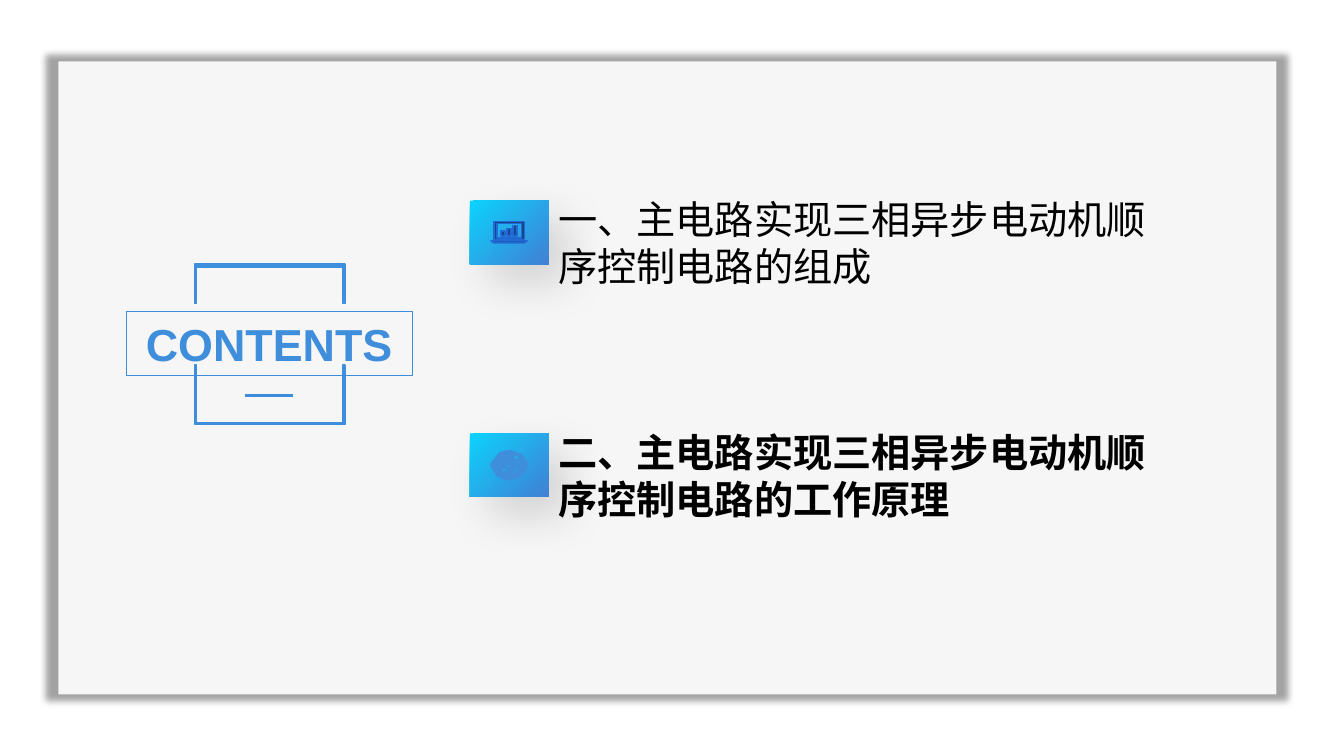
import pptx
import pptx.dml.color
import pptx.enum.dml
import pptx.enum.shapes
import pptx.enum.text
import pptx.oxml
import pptx.oxml.ns
import pptx.util

Inches = pptx.util.Inches
Pt = pptx.util.Pt
RGBColor = pptx.dml.color.RGBColor
RECTANGLE = pptx.enum.shapes.MSO_SHAPE.RECTANGLE

WHITE = RGBColor(0xFF, 0xFF, 0xFF)
BLACK = RGBColor(0, 0, 0)
BLUE = RGBColor(0x3F, 0x8E, 0xDB)
TILE_CYAN = RGBColor(0x00, 0xD1, 0xFE)
TILE_BLUE = RGBColor(0x39, 0x7C, 0xD5)
LAPTOP_FILL = RGBColor(0x16, 0x46, 0x8D)
LAPTOP_LINE = RGBColor(0x21, 0x69, 0xD3)
CHINESE_FONT = "Noto Sans CJK SC"


def rectangle_outline(left, top, right, bottom):
    return [(left, top), (right, top), (right, bottom), (left, bottom)]


# Outlines are in hundredths of an inch from the top left of their figure.
LAPTOP = [
    [(1, 19), (35, 19), (36, 19), (33, 21), (3, 21), (0, 19)],
    rectangle_outline(3, 0, 33, 18),
    rectangle_outline(6, 2, 30, 16),
    *(rectangle_outline(left, top, left + 4, 14)
      for left, top in ((10, 9), (16, 7), (22, 4))),
]
BALL = [
    [(22, 23), (23, 24), (26, 27), (18, 29), (13, 28)],
    [(21, 20), (22, 20), (22, 21)],
    [(16, 20), (19, 20), (21, 22), (11, 28), (9, 26), (12, 21)],
    [(35, 19), (27, 27), (23, 22), (24, 21), (25, 21), (27, 19)],
    [(1, 17), (10, 19), (11, 20), (7, 26)],
    [(16, 17), (18, 19), (16, 19), (15, 17)],
    [(30, 14), (34, 18), (27, 18)],
    [(31, 13), (36, 14), (35, 17)],
    [(12, 12), (14, 15), (15, 15), (14, 17), (10, 18), (0, 16), (0, 13)],
    [(20, 12), (29, 13), (26, 17), (22, 19), (20, 19), (17, 16)],
    [(18, 12), (18, 13), (16, 14), (15, 14), (14, 12)],
    [(24, 9), (26, 9), (27, 10), (28, 11), (21, 11)],
    [(34, 9), (36, 13), (31, 12)],
    [(31, 5), (33, 7), (30, 12), (28, 10), (27, 9), (28, 7), (28, 6)],
    [(8, 3), (12, 11), (1, 12)],
    [(22, 1), (30, 4), (27, 5), (24, 5)],
    [(18, 0), (20, 0), (23, 5), (22, 7), (23, 8), (19, 11), (13, 11), (9, 2)],
]
BRACKETS = [
    [(0, 100), (2, 100), (2, 157), (147, 157),
     (147, 100), (149, 100), (149, 159), (0, 159)],
    [(0, 0), (149, 0), (149, 39), (147, 39),
     (147, 3), (2, 3), (2, 39), (0, 39)],
]
TOPICS = [
    ("一、主电路实现三相异步电动机顺序控制电路的组成", False,
     LAPTOP, 0.21, LAPTOP_FILL, LAPTOP_LINE),
    ("二、主电路实现三相异步电动机顺序控制电路的工作原理", True,
     BALL, 0.17, BLUE, BLUE),
]


def xml_element(tag, **attributes):
    element = pptx.oxml.parse_xml(
        f"<{tag} {pptx.oxml.ns.nsdecls('a')}/>")
    for name, value in attributes.items():
        element.set(name, str(value))
    return element


def format_font(font, **values):
    for name, value in values.items():
        setattr(font, name, value)


def set_opacity(shape, percent):
    for colour in shape.fill._xPr.xpath("./a:solidFill/a:srgbClr | ./a:gradFill//a:srgbClr"):
        colour.append(xml_element("a:alpha", val=percent * 1000))


def add_shadow(shape, opacity, blur, distance=0, angle=0, scale=100):
    shape.shadow.inherit = False
    shadow = xml_element(
        "a:outerShdw", blurRad=Pt(blur), dist=Pt(distance),
        dir=angle * 60000, sx=scale * 1000, sy=scale * 1000,
        algn="ctr", rotWithShape=0)
    colour = xml_element("a:srgbClr", val=BLACK)
    colour.append(xml_element("a:alpha", val=opacity * 1000))
    shadow.append(colour)
    shape._element.spPr.find(pptx.oxml.ns.qn("a:effectLst")).append(shadow)


def add_outlines(slide, left, top, outlines, fill, line):
    """Draw closed outlines as one figure; inner outlines become holes."""
    builder = slide.shapes.build_freeform(*outlines[0][0], scale=Inches(0.01))
    builder.add_line_segments(outlines[0][1:], close=True)
    for outline in outlines[1:]:
        builder.move_to(*outline[0])
        builder.add_line_segments(outline[1:], close=True)
    figure = builder.convert_to_shape(Inches(left), Inches(top))
    figure.shadow.inherit = False
    figure.fill.solid()
    figure.fill.fore_color.rgb = fill
    figure.line.color.rgb = line
    figure.line.width = Pt(1)


def add_panel(slide, left, top, width, height):
    panel = slide.shapes.add_shape(
        RECTANGLE, *map(Inches, (left, top, width, height)))
    panel.fill.solid()
    panel.fill.fore_color.rgb = WHITE
    panel.line.fill.background()
    set_opacity(panel, 91)
    add_shadow(panel, opacity=40, blur=5, scale=102)
    # The title placeholder must stay in front of the panel.
    slide.shapes._spTree.insert(2, panel._element)


def add_contents_sign(slide, left, top, width, height):
    add_outlines(slide, left + 0.68, top - 0.47, BRACKETS, BLUE, BLUE)

    title = slide.shapes.title
    title.left, title.top, title.width, title.height = map(
        Inches, (left, top, width, height))
    title.line.color.rgb = BLUE
    title.line.width = Pt(0.75)
    frame = title.text_frame
    frame.text = "CONTENTS"
    frame.word_wrap = True
    frame.auto_size = pptx.enum.text.MSO_AUTO_SIZE.NONE
    frame.vertical_anchor = pptx.enum.text.MSO_ANCHOR.MIDDLE
    frame.paragraphs[0].alignment = pptx.enum.text.PP_ALIGN.CENTER
    font = frame.paragraphs[0].runs[0].font
    format_font(font, name="Arial", size=Pt(32), bold=True)
    font.color.rgb = BLUE

    dash_y = Inches(top + 0.83)
    dash = slide.shapes.add_connector(
        pptx.enum.shapes.MSO_CONNECTOR.STRAIGHT,
        Inches(left + 1.18), dash_y, Inches(left + 1.66), dash_y)
    dash.line.color.rgb = BLUE
    dash.line.width = Pt(2)
    dash._element.spPr.append(xml_element("a:effectLst"))


def add_topic(slide, left, top, width, topic):
    wording, bold, icon, icon_drop, icon_fill, icon_line = topic
    tile_width = 0.78
    tile = slide.shapes.add_shape(
        RECTANGLE, *map(Inches, (left, top, tile_width, 0.63)))
    tile.fill.gradient()
    tile.fill.gradient_angle = 315
    for stop, colour in zip(tile.fill.gradient_stops, (TILE_CYAN, TILE_BLUE)):
        stop.color.rgb = colour
    tile.line.fill.background()
    set_opacity(tile, 95)
    add_shadow(tile, opacity=14, blur=32, distance=19, angle=45)
    add_outlines(slide, left + 0.21, top + icon_drop, icon, icon_fill, icon_line)

    label = slide.shapes.add_textbox(*map(
        Inches, (left + tile_width, top - 0.1, width - tile_width, 1.04)))
    label.text_frame.word_wrap = True
    run = label.text_frame.paragraphs[0].add_run()
    run.text = wording
    format_font(run.font, name=CHINESE_FONT, size=Pt(28), bold=bold)
    run.font.color.rgb = BLACK
    run.font._element.append(xml_element("a:ea", typeface=CHINESE_FONT))


def main():
    deck = pptx.Presentation()
    deck.slide_width, deck.slide_height = Inches(13.33), Inches(7.5)
    slide = deck.slides.add_slide(deck.slide_layouts[5])
    add_panel(slide, 0.58, 0.61, 12.08, 6.28)
    add_contents_sign(slide, 1.25, 3.09, 2.84, 0.64)
    for row, topic in enumerate(TOPICS):
        add_topic(slide, 4.66, 1.99 + row * 2.31, 7.12, topic)
    deck.save("out.pptx")


if __name__ == "__main__":
    main()
